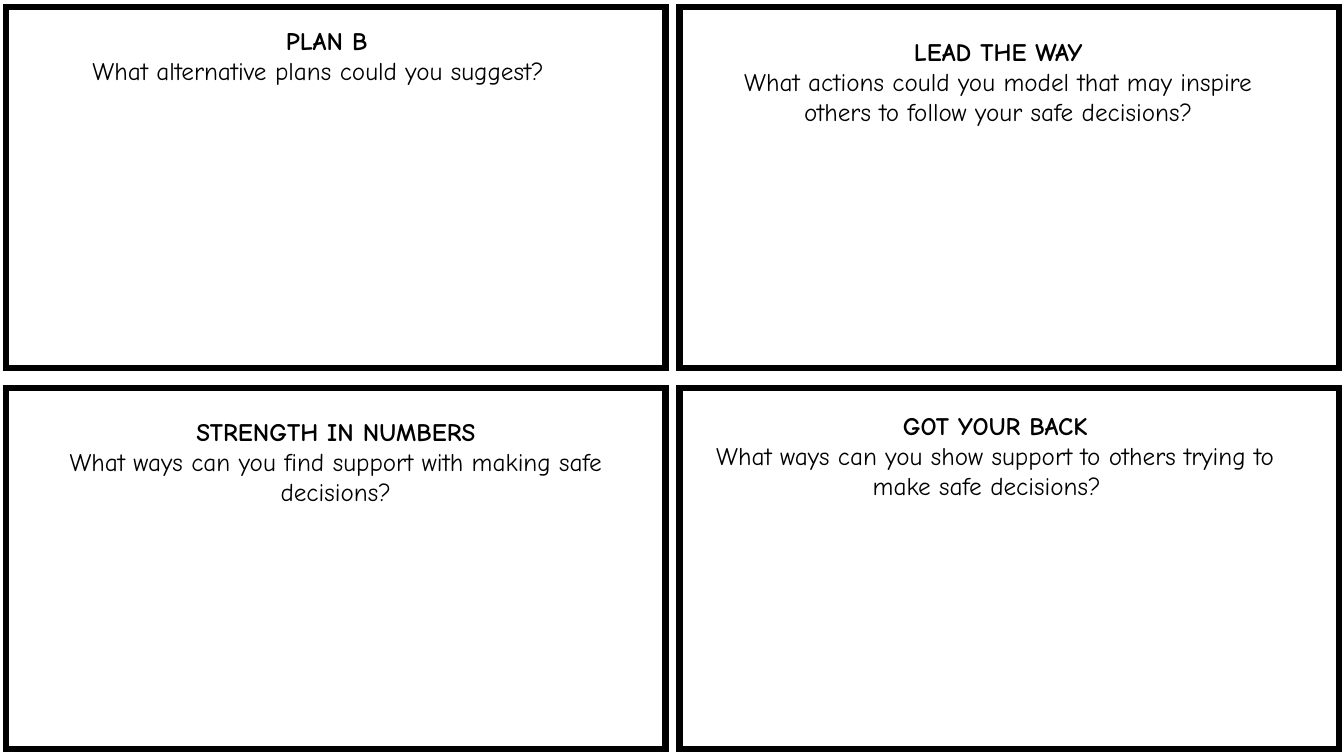
"""Build a four-panel worksheet slide about making safe decisions."""
from dataclasses import dataclass

from lxml.etree import SubElement
from pptx import Presentation
from pptx.dml.color import RGBColor
from pptx.enum.shapes import MSO_SHAPE
from pptx.enum.text import MSO_AUTO_SIZE, PP_ALIGN
from pptx.oxml.ns import qn
from pptx.slide import Slide
from pptx.util import Inches, Pt

LEFT, TOP = 0.06, 0.07
PANEL_W, PANEL_H = 6.54, 3.58
STEP_X, STEP_Y = 6.68, 3.78
TEXT_W = 5.78


@dataclass(frozen=True)
class Panel:
    heading: str
    question: str
    text_left: float
    text_top: float
    text_height: float = 1.01


PANELS = [
    Panel("PLAN B", "What alternative plans could you suggest?  ", 0.35, 0.2, 0.71),
    Panel("LEAD THE WAY",
          "What actions could you model that may inspire others to follow your safe decisions?",
          7.01, 0.31),
    Panel("STRENGTH IN NUMBERS",
          "What ways can you find support with making safe decisions?", 0.44, 4.08),
    Panel("GOT YOUR BACK",
          "What ways can you show support to others trying to make safe decisions?  ",
          6.98, 4.02),
]


def color(value: str) -> RGBColor:
    return RGBColor.from_string(value)


def draw_frame(s: Slide, row: int, col: int) -> None:
    sp = s.shapes.add_shape(
        MSO_SHAPE.RECTANGLE, Inches(LEFT + col * STEP_X), Inches(TOP + row * STEP_Y),
        Inches(PANEL_W), Inches(PANEL_H))
    sp.shadow.inherit = False
    sp.fill.solid()
    sp.fill.fore_color.rgb = color("FFFFFF")
    sp.line.color.rgb = color("000000")
    sp.line.width = Pt(4.5)
    SubElement(sp.element.spPr.find(qn("a:ln")), qn("a:miter"), lim="800000")


def draw_prompt(s: Slide, panel: Panel) -> None:
    box = s.shapes.add_textbox(
        Inches(panel.text_left), Inches(panel.text_top),
        Inches(TEXT_W), Inches(panel.text_height))
    tf = box.text_frame
    tf.word_wrap = True
    tf.auto_size = MSO_AUTO_SIZE.SHAPE_TO_FIT_TEXT
    tf.text = f"{panel.heading}\n{panel.question}"
    for p, bold in zip(tf.paragraphs, (True, False)):
        p.alignment = PP_ALIGN.CENTER
        p.font.name = "Comic Neue"
        p.font.size = Pt(18)
        p.font.bold = bold
        p.font.color.rgb = color("000000")


def main() -> None:
    prs = Presentation()
    prs.slide_width, prs.slide_height = Inches(13.33), Inches(7.5)
    s = prs.slides.add_slide(prs.slide_layouts[6])
    for i, panel in enumerate(PANELS):
        draw_frame(s, *divmod(i, 2))
        draw_prompt(s, panel)
    prs.save("out.pptx")


if __name__ == "__main__":
    main()
